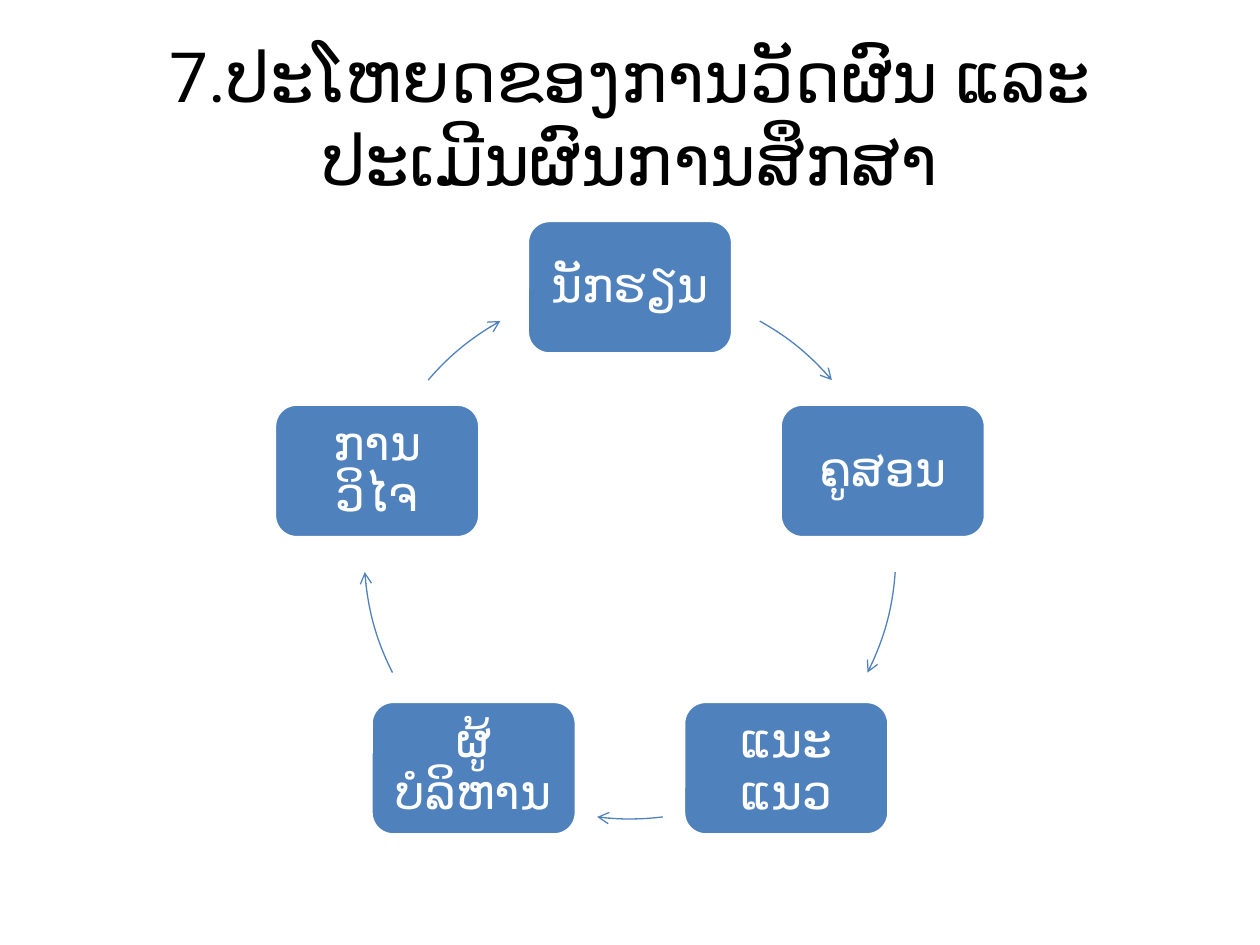
from dataclasses import dataclass
from math import cos, radians, sin

from lxml import etree
from pptx import Presentation
from pptx import util as u
from pptx.dml.color import RGBColor
from pptx.enum import shapes, text
from pptx.oxml import ns

FONT = "Roboto"
BLUE = "4F81BD"
WHITE = "FFFFFF"
BLACK = "000000"
MID_X, MID_Y, RADIUS = 5, 4.39, 2.11
BOX_W, BOX_H = 1.63, 1.06


@dataclass
class Step:
    label: str
    start: float
    end: float


STEPS = [
    Step("ນັກຮຽນ", 299.2, 319.4),
    Step("ຄູສອນ", 4.1, 26.7),
    Step("ແນະແນວ", 82.9, 97.1),
    Step("ຜູ້ບໍລິຫານ", 153.3, 175.9),
    Step("ການວິໄຈ", 220.6, 240.8),
]


def paint(fmt, tone: str) -> None:
    fmt.solid()
    fmt.fore_color.rgb = RGBColor.from_string(tone)


def write(frame, label: str, size: float, tone: str, gap: float = 1.0) -> None:
    frame.word_wrap = True
    frame.vertical_anchor = text.MSO_ANCHOR.MIDDLE
    para = frame.paragraphs[0]
    para.text = label
    para.alignment = text.PP_ALIGN.CENTER
    para.line_spacing = gap
    para.font.name = FONT
    para.font.size = u.Pt(size)
    paint(para.font.fill, tone)


def add_box(slide, step: Step, angle: float) -> None:
    turn = radians(angle)
    left = MID_X + RADIUS * cos(turn) - BOX_W / 2
    top = MID_Y + RADIUS * sin(turn) - BOX_H / 2
    box = slide.shapes.add_shape(
        shapes.MSO_SHAPE.ROUNDED_RECTANGLE,
        u.Inches(left), u.Inches(top), u.Inches(BOX_W), u.Inches(BOX_H))
    box.shadow.inherit = False
    paint(box.fill, BLUE)
    paint(box.line.fill, WHITE)
    box.line.width = u.Pt(2)
    frame = box.text_frame
    frame.margin_left = frame.margin_right = u.Inches(0.11)
    frame.margin_top = frame.margin_bottom = u.Inches(0.11)
    write(frame, step.label, 27, WHITE, 0.9)


def add_arc(slide, step: Step) -> None:
    side = u.Inches(2 * RADIUS)
    arc = slide.shapes.add_shape(
        shapes.MSO_SHAPE.ARC,
        u.Inches(MID_X - RADIUS), u.Inches(MID_Y - RADIUS), side, side)
    arc.adjustments[0] = step.start * 0.6
    arc.adjustments[1] = step.end * 0.6
    arc.shadow.inherit = False
    arc.fill.background()
    paint(arc.line.fill, BLUE)
    arc.line.width = u.Pt(0.75)
    line = arc.element.spPr.find(ns.qn("a:ln"))
    etree.SubElement(line, ns.qn("a:tailEnd"), type="arrow")


def main() -> None:
    deck = Presentation()
    deck.slide_width, deck.slide_height = u.Inches(10), u.Inches(7.5)
    slide = deck.slides.add_slide(deck.slide_layouts[6])
    title = slide.shapes.add_textbox(
        u.Inches(0.5), u.Inches(0.3), u.Inches(9), u.Inches(1.25))
    write(title.text_frame, "7.ປະໂຫຍດຂອງການວັດຜົນ ແລະ ປະເມີນຜົນການສຶກສາ",
          39.6, BLACK)
    for i, step in enumerate(STEPS):
        add_box(slide, step, i * 360 / len(STEPS) - 90)
        add_arc(slide, step)
    deck.save("out.pptx")


if __name__ == "__main__":
    main()
